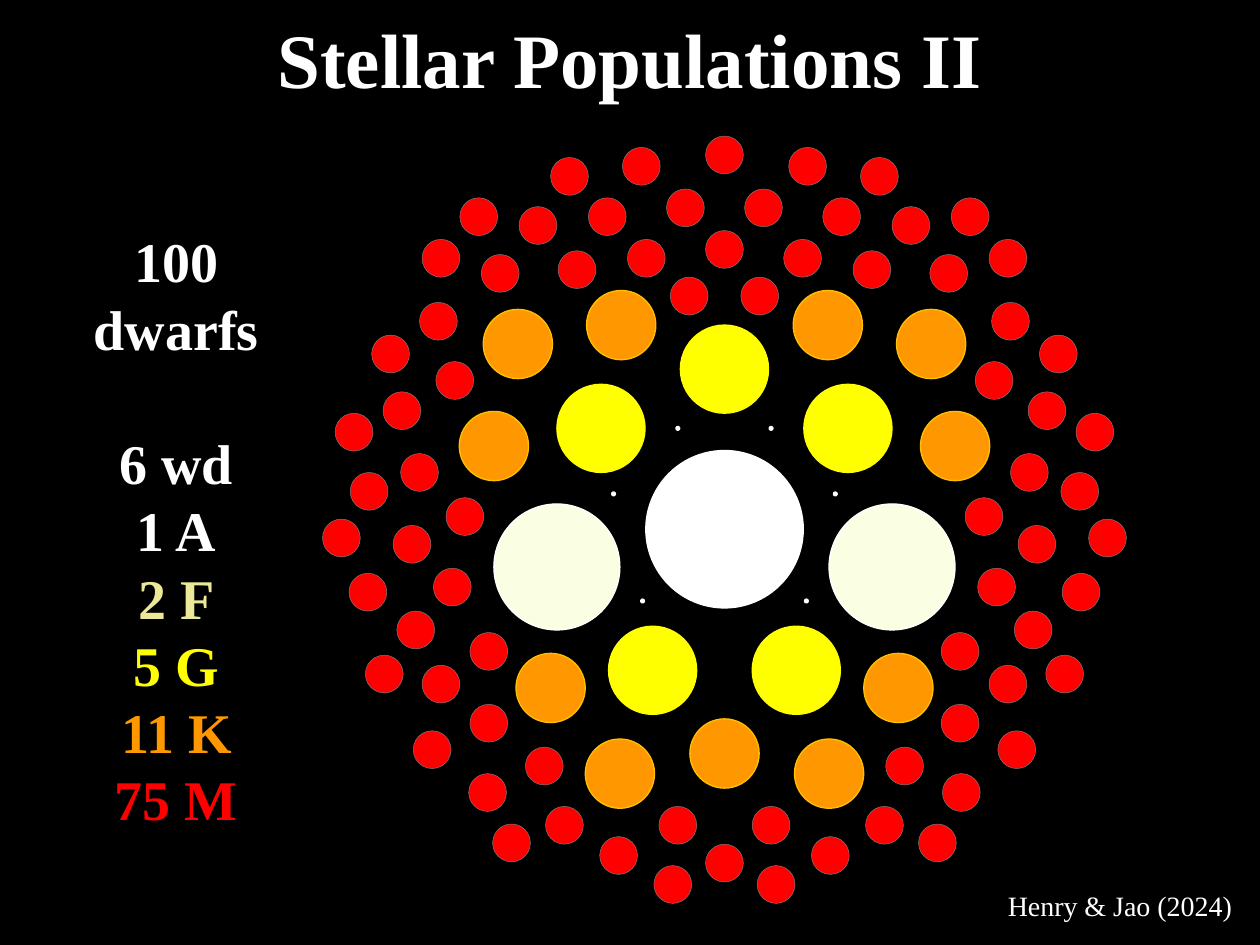
import pptx
import pptx.util
import pptx.dml.color
import pptx.enum.shapes
import pptx.enum.text
from lxml import etree

PX = 9144  # EMU per px, 100 px to the inch
WIDE, HIGH = 1000, 750
AXIS = 575  # the cluster is the same on both sides of this x
FONT = "Times New Roman"
WHITE, CREAM, YELLOW, AMBER = "FFFFFF", "FAFFE3", "FFFF00", "FF9800"
GOLD, RED, GREY, BLACK = "FFC000", "FF0000", "808080", "000000"
LINE = 38.5  # points from one legend line to the next

TITLE = "Stellar Populations II"
CREDIT = "Henry & Jao (2024)"

# Legend blocks, set one line apart: (text, colour) of each line
LEGEND = [
    [("100", WHITE), ("dwarfs", WHITE)],
    [("6 wd", WHITE), ("1 A", WHITE), ("2 F", "EBE899"),
     ("5 G", YELLOW), ("11 K", AMBER), ("75 M", RED)],
]

# Look of each star class
LOOKS = {
    "A": dict(size=125, fill=WHITE, line=WHITE, width=0.75),
    "wd": dict(size=3, fill=WHITE, line=WHITE, width=0.75),
    "F": dict(size=100, fill=CREAM, line=WHITE, width=0.75),
    "G": dict(size=70, fill=YELLOW, line=YELLOW, width=0.75),
    "K": dict(size=55, fill=AMBER, line=GOLD, width=0.75),
    "M": dict(size=30, fill=RED, line=GREY, width=0.25),
}

# Rings from the centre out, each read from top to bottom: (class, places).
# A place is (distance from the axis, y of the centre). It stands for a pair
# of stars, one on each side, or for one star if the distance is 0.
RINGS = [
    ("A", [(0, 420)]),
    ("wd", [(37, 340), (88, 392), (65, 477)]),
    ("F", [(133, 450)]),
    ("G", [(0, 293), (98, 340), (57, 532)]),
    ("K", [(82, 258), (164, 273), (183, 354), (138, 546), (83, 614), (0, 598)]),
    # Inner M ring
    ("M", [(0, 198), (62, 205), (117, 214), (28, 235), (214, 302), (206, 410),
           (216, 466), (187, 517), (187, 574), (143, 608), (37, 655)]),
    # Middle M ring
    ("M", [(31, 165), (93, 172), (148, 179), (178, 217), (227, 255), (256, 326),
           (242, 375), (248, 432), (245, 500), (225, 543), (188, 629),
           (127, 655), (84, 679), (0, 685)]),
    # Outer M ring
    ("M", [(0, 123), (66, 132), (123, 140), (195, 172), (225, 205), (265, 281),
           (294, 343), (282, 390), (304, 427), (283, 470), (270, 535),
           (232, 595), (169, 669), (41, 702)]),
]


def rgb(code):
    return pptx.dml.color.RGBColor.from_string(code)


def paint(fill, code):
    fill.solid()
    fill.fore_color.rgb = rgb(code)


def mirror(places):
    """Yield the centre of every star in a ring."""
    for gap, y in places:
        for x in sorted({AXIS - gap, AXIS + gap}):
            yield x, y


def star(slide, x, y, size, fill, line, width):
    left, top = (int((mid - size / 2) * PX) for mid in (x, y))
    oval = slide.shapes.add_shape(
        pptx.enum.shapes.MSO_SHAPE.OVAL, left, top, size * PX, size * PX)
    oval.shadow.inherit = False
    paint(oval.fill, fill)
    oval.line.color.rgb = rgb(line)
    oval.line.width = pptx.util.Pt(width)


def place(shape, left, top, width, height, wrap=False, anchor="TOP"):
    """Move a text shape, set up its frame and return the frame."""
    shape.left, shape.top = left * PX, top * PX
    shape.width, shape.height = width * PX, height * PX
    frame = shape.text_frame
    frame.word_wrap = wrap
    frame.auto_size = pptx.enum.text.MSO_AUTO_SIZE.NONE
    frame.vertical_anchor = getattr(pptx.enum.text.MSO_ANCHOR, anchor)
    return frame


def write(para, text, size, color=WHITE, bold=False, align="CENTER", before=0):
    para.alignment = getattr(pptx.enum.text.PP_ALIGN, align)
    para.space_before = pptx.util.Pt(before)
    run = para.add_run()
    run.text = text
    font = run.font
    font.name, font.size, font.bold = FONT, pptx.util.Pt(size), bold
    font.color.rgb = rgb(color)


def plain(para):
    """Take the bullet and indent off a list line."""
    props = para._p.get_or_add_pPr()
    props.set("marL", "0")
    props.set("indent", "0")
    etree.SubElement(props, pptx.oxml.ns.qn("a:buNone"))


def legend(frame):
    para = frame.paragraphs[0]
    for b, block in enumerate(LEGEND):
        for i, (text, color) in enumerate(block):
            if b or i:
                para = frame.add_paragraph()
            before = LINE if b and not i else 0
            write(para, text, 32, color=color, bold=True, before=before)
            plain(para)


def main():
    deck = pptx.Presentation()
    deck.slide_width, deck.slide_height = WIDE * PX, HIGH * PX
    slide = deck.slides.add_slide(deck.slide_layouts[1])
    paint(slide.background.fill, BLACK)

    # Star cluster
    for kind, places in RINGS:
        for x, y in mirror(places):
            star(slide, x, y, **LOOKS[kind])

    # Title
    head = place(slide.shapes.title, 0, 0, WIDE, 92, wrap=True, anchor="MIDDLE")
    write(head.paragraphs[0], TITLE, 44, bold=True)

    # Legend
    legend(place(slide.placeholders[1], 64, 175, 152, 495))

    # Credit
    note = place(slide.shapes.add_textbox(0, 0, 0, 0), 790, 700, 201, 37)
    write(note.paragraphs[0], CREDIT, 16, align="LEFT")

    deck.save("out.pptx")


if __name__ == "__main__":
    main()
